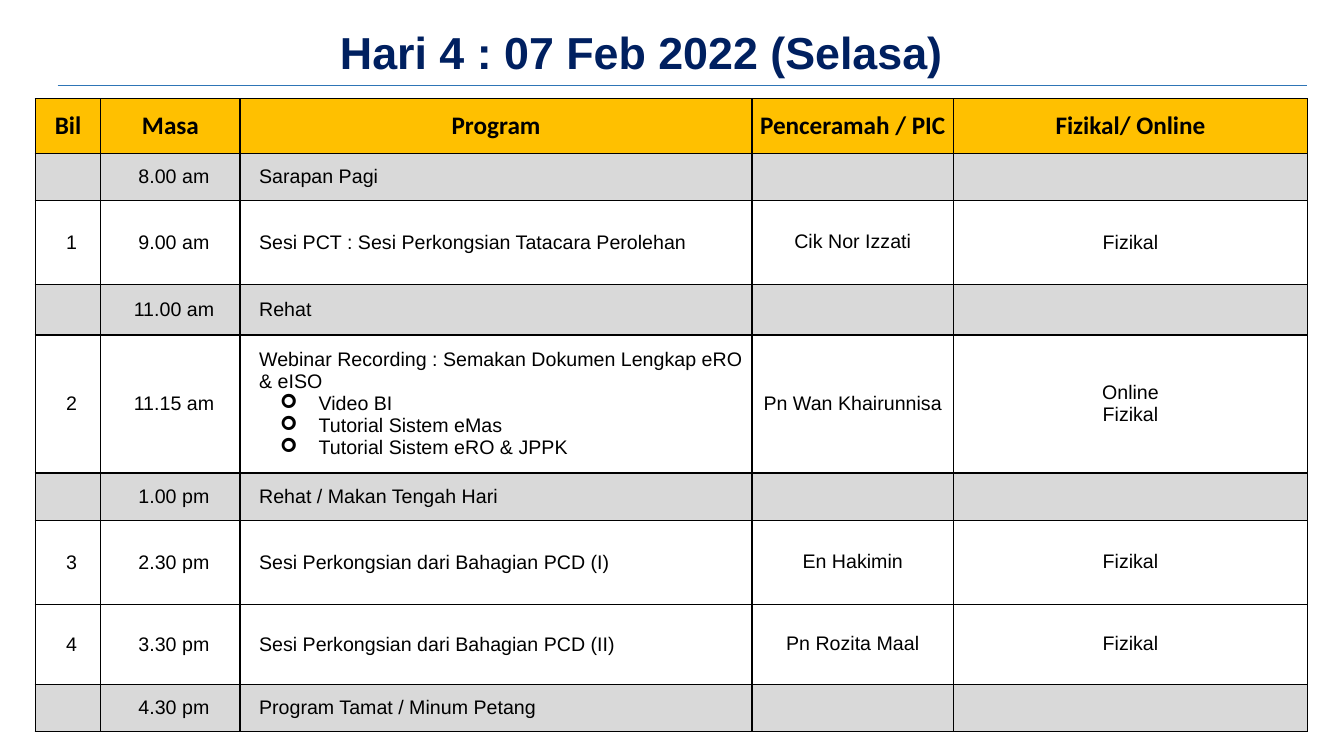
from lxml import etree
from pptx import Presentation, util as u
from pptx.dml.color import RGBColor
from pptx.enum import shapes, text
from pptx.oxml import ns

COLORS = {"navy": "002060", "rule": "2E75B6", "header": "FFC000",
          "pause": "D9D9D9", "session": "FFFFFF", "black": "000000"}
CENTER, LEFT = text.PP_ALIGN.CENTER, text.PP_ALIGN.LEFT

COLUMN_WIDTHS = [1.65, 3.51, 12.9, 5.08, 8.92]
ROW_HEIGHTS = [1.37, 1.2, 2.11, 1.27, 3.48, 1.2, 2.11, 2.01, 1.2]
HEADINGS = ["Bil", "Masa", "Program", "Penceramah / PIC", "Fizikal/ Online"]
# Number, time, programme, speaker, place; rows without a number are pauses
AGENDA = [
    ("", "8.00 am", "Sarapan Pagi", "", ""),
    ("1", "9.00 am", "Sesi PCT : Sesi Perkongsian Tatacara Perolehan",
     "Cik Nor Izzati", "Fizikal"),
    ("", "11.00 am", "Rehat", "", ""),
    ("2", "11.15 am", "Webinar Recording : Semakan Dokumen Lengkap eRO & eISO",
     "Pn Wan Khairunnisa", "Online\nFizikal"),
    ("", "1.00 pm", "Rehat / Makan Tengah Hari", "", ""),
    ("3", "2.30 pm", "Sesi Perkongsian dari Bahagian PCD (I)", "En Hakimin", "Fizikal"),
    ("4", "3.30 pm", "Sesi Perkongsian dari Bahagian PCD (II)", "Pn Rozita Maal", "Fizikal"),
    ("", "4.30 pm", "Program Tamat / Minum Petang", "", ""),
]
WEBINAR_TOPICS = {"2": ["Video BI", "Tutorial Sistem eMas", "Tutorial Sistem eRO & JPPK"]}


def color(name):
    return RGBColor.from_string(COLORS[name])


def write(para, words, size=14, font="Arial", bold=False, ink="black",
          align=CENTER, left=0, hanging=0, line=None, bullet=None):
    span = para.add_run()
    span.text = words
    span.font.size, span.font.name, span.font.bold = u.Pt(size), font, bold
    span.font.color.rgb = color(ink)
    para.alignment = align
    if line:
        para.line_spacing = u.Pt(line)
    props = para._p.get_or_add_pPr()
    props.set("marL", str(u.Cm(left)))
    props.set("indent", str(-u.Cm(hanging)))
    if bullet:
        etree.SubElement(props, ns.qn("a:buFont"), typeface="Wingdings")
        etree.SubElement(props, ns.qn("a:buChar"), char=bullet)


def style_cell(cell, fill, side=0):
    props = cell._tc.get_or_add_tcPr()
    for index, edge in enumerate(("lnL", "lnR", "lnT", "lnB")):
        border = etree.Element(ns.qn("a:" + edge), w=str(u.Pt(1)))
        solid = etree.SubElement(border, ns.qn("a:solidFill"))
        etree.SubElement(solid, ns.qn("a:srgbClr"), val=COLORS["black"])
        props.insert(index, border)
    cell.fill.solid()
    cell.fill.fore_color.rgb = color(fill)
    cell.vertical_anchor = text.MSO_ANCHOR.MIDDLE
    cell.margin_left = cell.margin_right = u.Cm(side)
    cell.margin_top = cell.margin_bottom = 0


def add_title(page, left, top, width, height):
    # Heading
    box = page.shapes.add_textbox(u.Cm(left + 3.38), u.Cm(top),
                                  u.Cm(width - 8.82), u.Cm(height - 0.18))
    frame = box.text_frame
    frame.word_wrap = True
    frame.vertical_anchor = text.MSO_ANCHOR.MIDDLE
    write(frame.paragraphs[0], "Hari 4 : 07 Feb 2022 (Selasa)",
          size=32, bold=True, ink="navy")
    # Rule below the heading
    base = u.Cm(top + height)
    rule = page.shapes.add_connector(shapes.MSO_CONNECTOR.STRAIGHT, u.Cm(left), base,
                                     u.Cm(left + width), base)
    rule.line.color.rgb = color("rule")
    rule.line.width = u.Pt(0.5)
    etree.SubElement(rule._element.spPr, ns.qn("a:effectLst"))


def add_agenda(page, left, top, width, height):
    table = page.shapes.add_table(len(ROW_HEIGHTS), len(COLUMN_WIDTHS), u.Cm(left),
                                  u.Cm(top), u.Cm(width), u.Cm(height)).table
    table.first_row = table.horz_banding = False
    for column, size in zip(table.columns, COLUMN_WIDTHS):
        column.width = u.Cm(size)
    for row, size in zip(table.rows, ROW_HEIGHTS):
        row.height = u.Cm(size)

    # Header row
    for cell, heading in zip(table.rows[0].cells, HEADINGS):
        style_cell(cell, "header", side=0.18)
        write(cell.text_frame.paragraphs[0], heading, size=18, font="Calibri", bold=True)

    # Sessions and pauses
    formats = [dict(left=0.18), dict(left=0.18, line=15.9), dict(align=LEFT, left=0.48),
               dict(line=15), dict(line=15.2)]
    for number, entry in enumerate(AGENDA, start=1):
        for cell, words, look in zip(table.rows[number].cells, entry, formats):
            style_cell(cell, "session" if entry[0] else "pause")
            if words:
                frame = cell.text_frame
                for index, line in enumerate(words.split("\n")):
                    para = frame.add_paragraph() if index else frame.paragraphs[0]
                    write(para, line, **look)
        for topic in WEBINAR_TOPICS.get(entry[0], []):
            write(table.cell(number, 2).text_frame.add_paragraph(), topic,
                  align=LEFT, left=1.98, hanging=0.97, bullet="➢")


def main():
    deck = Presentation()
    deck.slide_width, deck.slide_height = u.Cm(33.87), u.Cm(19.05)
    page = deck.slides.add_slide(deck.slide_layouts[6])
    add_title(page, 1.45, 0.61, 31.5, 1.55)
    add_agenda(page, 0.89, 2.49, sum(COLUMN_WIDTHS), sum(ROW_HEIGHTS))
    deck.save("out.pptx")


if __name__ == "__main__":
    main()
